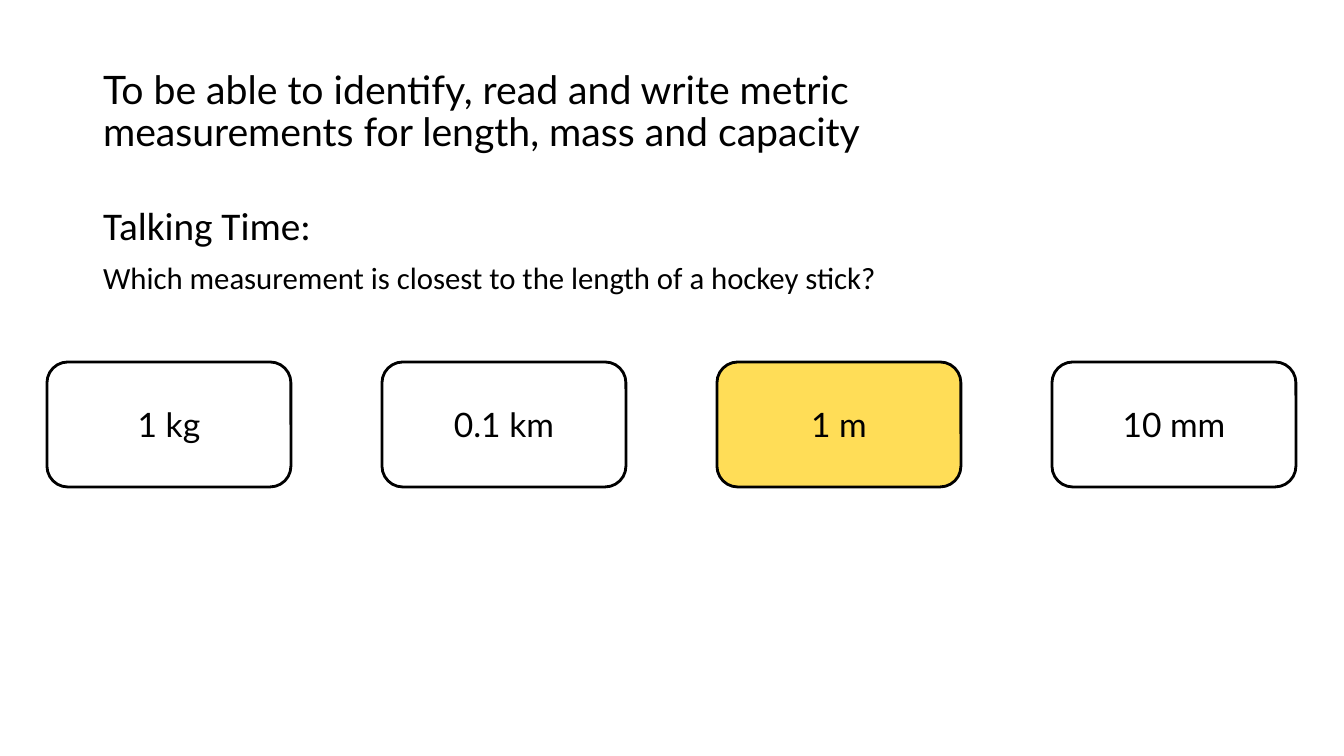
from lxml import etree
from pptx import Presentation
from pptx.dml.color import RGBColor
from pptx.enum.shapes import MSO_SHAPE
from pptx.enum.text import MSO_ANCHOR, MSO_AUTO_SIZE, PP_ALIGN
from pptx.oxml.ns import qn
from pptx.util import Pt

ROUNDED = MSO_SHAPE.ROUNDED_RECTANGLE
TOP, MIDDLE = MSO_ANCHOR.TOP, MSO_ANCHOR.MIDDLE
NO_AUTOFIT = MSO_AUTO_SIZE.NONE
LEFT, CENTER = PP_ALIGN.LEFT, PP_ALIGN.CENTER

EMU_PER_PX = 914400 / 100.8
COLORS = {"ink": "000000", "card": "FFFFFF", "answer": "FFDD57"}
ANSWERS = ["1 kg", "0.1 km", "1 m", "10 mm"]
CORRECT_ANSWER = "1 m"


def px(length):
    return round(length * EMU_PER_PX)


def color(name):
    return RGBColor.from_string(COLORS[name])


def write_text(paragraph, text, size, font="Lato", align=LEFT, spacing=0.9, before=0):
    properties = paragraph._p.get_or_add_pPr()
    properties.set("marL", "0")
    properties.set("indent", "0")
    etree.SubElement(properties, qn("a:buNone"))
    paragraph.alignment = align
    paragraph.line_spacing = spacing
    paragraph.space_before = Pt(before)
    run = paragraph.add_run()
    run.text = text
    run.font.name = font
    run.font.size = Pt(size)
    run.font.color.rgb = color("ink")


def place_text_frame(shape, box, anchor):
    shape.left, shape.top, shape.width, shape.height = map(px, box)
    frame = shape.text_frame
    frame.auto_size = NO_AUTOFIT
    frame.word_wrap = True
    frame.vertical_anchor = anchor
    return frame


def add_objective(slide, box):
    frame = place_text_frame(slide.shapes.title, box, MIDDLE)
    objective = ("To be able to identify, read and write metric "
                 "measurements for length, mass and capacity")
    write_text(frame.paragraphs[0], objective, size=28)


def add_question(slide, box):
    frame = place_text_frame(slide.placeholders[1], box, TOP)
    write_text(frame.paragraphs[0], "Talking Time:", size=28, font="Calibri")
    question = "Which measurement is closest to the length of a hockey stick?"
    write_text(frame.add_paragraph(), question, size=22, font="Calibri", before=10)


def add_answer_cards(slide, box, card_width):
    left, top, width, height = box
    pitch = (width - card_width) / (len(ANSWERS) - 1)
    for index, answer in enumerate(ANSWERS):
        card_box = (left + index * pitch, top, card_width, height)
        card = slide.shapes.add_shape(ROUNDED, *map(px, card_box))
        card.shadow.inherit = False
        card.fill.solid()
        card.fill.fore_color.rgb = color("answer" if answer == CORRECT_ANSWER else "card")
        card.line.color.rgb = color("ink")
        card.line.width = Pt(2)
        frame = place_text_frame(card, card_box, MIDDLE)
        write_text(frame.paragraphs[0], answer, size=24, align=CENTER, spacing=1.0)


def main():
    presentation = Presentation()
    presentation.slide_width = px(1344)
    presentation.slide_height = px(756)
    slide = presentation.slides.add_slide(presentation.slide_layouts[1])
    add_objective(slide, (93, 40, 968, 146))
    add_question(slide, (93, 202, 1159, 480))
    add_answer_cards(slide, (47, 362, 1249, 125), card_width=244)
    presentation.save("out.pptx")


if __name__ == "__main__":
    main()
